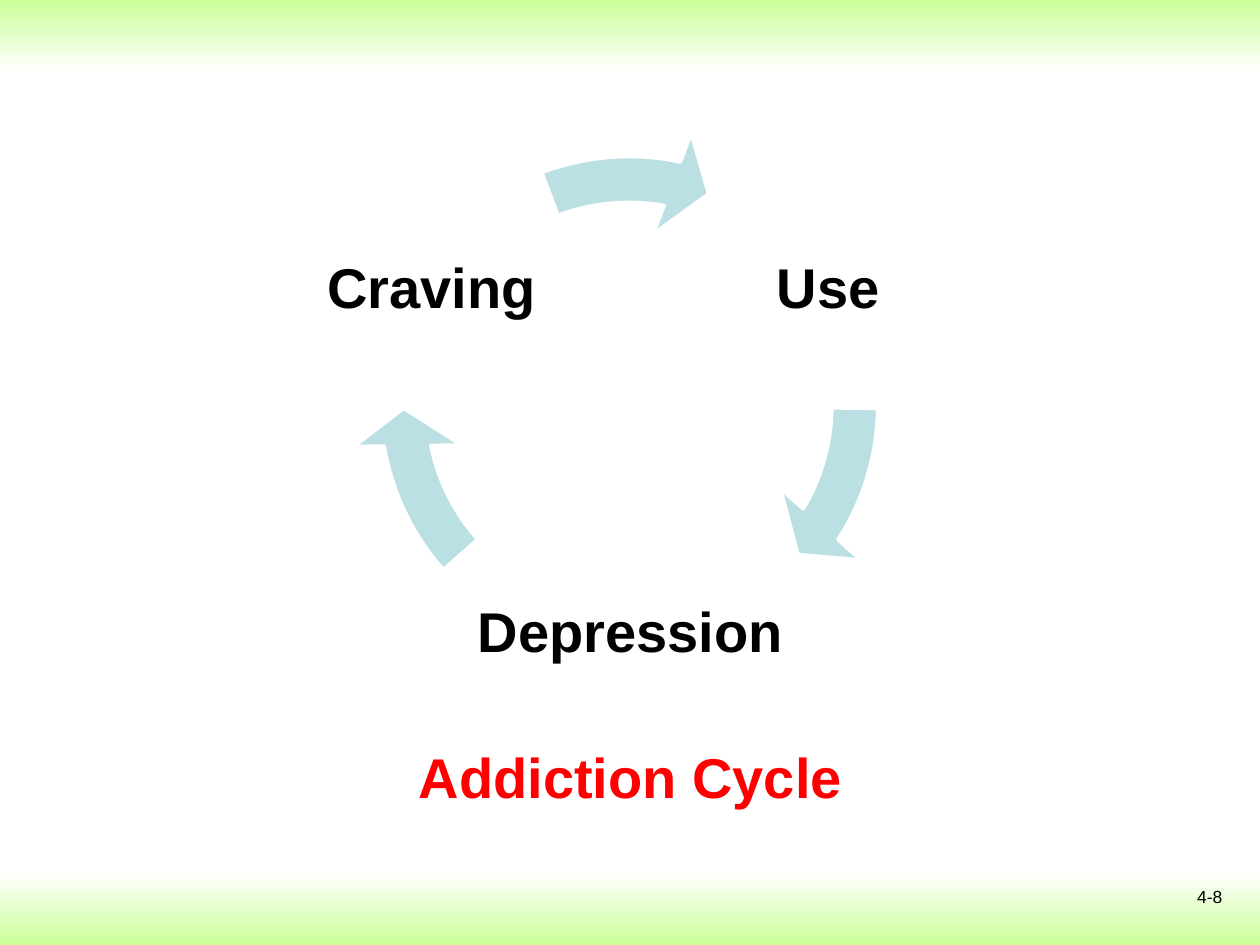
from pptx import Presentation
from pptx.dml.color import RGBColor
from pptx.enum.shapes import MSO_SHAPE as Shape
from pptx.enum.text import MSO_ANCHOR as Anchor, MSO_AUTO_SIZE as Fit, PP_ALIGN as Align
from pptx.util import Inches, Pt

BLACK = RGBColor(0x00, 0x00, 0x00)
WHITE = RGBColor(0xFF, 0xFF, 0xFF)
RED = RGBColor(0xFF, 0x00, 0x00)
LIME = RGBColor(0xCC, 0xFF, 0x99)
TEAL = RGBColor(0xBB, 0xE0, 0xE3)
LABEL = {"name": "Arial", "size": Pt(32), "bold": True}
SMALL = {"name": "Arial", "size": Pt(10), "bold": False}


def write(box, text, color, font, align=Align.CENTER):
    para = box.text_frame.paragraphs[0]
    para.alignment = align
    run = para.add_run()
    run.text = text
    for key, val in font.items():
        setattr(run.font, key, val)
    run.font.color.rgb = color
    return para


deck = Presentation()
deck.slide_width, deck.slide_height = Inches(10), Inches(7.5)
slide = deck.slides.add_slide(deck.slide_layouts[5])
shapes = slide.shapes

# Bands fading towards the middle of the slide
for top, colors in ((6.92, (WHITE, LIME)), (0, (LIME, WHITE))):
    band = shapes.add_shape(Shape.RECTANGLE, 0, Inches(top), Inches(10), Inches(0.58))
    band.shadow.inherit = False
    band.line.fill.background()
    band.fill.gradient()
    band.fill.gradient_angle = 270
    for stop, color in zip(band.fill.gradient_stops, colors):
        stop.color.rgb = color

title = shapes.title
title.left, title.top = Inches(3.21), Inches(5.84)
title.width, title.height = Inches(3.59), Inches(0.64)
frame = title.text_frame
frame.word_wrap = False
frame.auto_size = Fit.NONE
frame.vertical_anchor = Anchor.TOP
write(title, "Addiction Cycle", RED, LABEL)

number = shapes.add_textbox(Inches(7.47), Inches(6.98), Inches(2.33), Inches(0.52))
number.text_frame.word_wrap = True
write(number, "4-8", BLACK, SMALL, Align.RIGHT)

# Each stage: label, left, top, width, then end and start of the arrow that follows
stages = (
    ("Use", 5.64, 1.37, 1.87, 19.175, 0.485),
    ("Depression", 3.64, 4.1, 2.73, 101.762, 83.072),
    ("Craving", 2.49, 1.37, 1.87, 168.603, 149.644),
)
for text, left, top, width, end, start in stages:
    box = shapes.add_textbox(Inches(left), Inches(top), Inches(width), Inches(1.87))
    frame = box.text_frame
    frame.word_wrap = True
    frame.vertical_anchor = Anchor.MIDDLE
    for side in ("left", "right", "top", "bottom"):
        setattr(frame, f"margin_{side}", Inches(0.04))
    write(box, text, BLACK, LABEL).line_spacing = 0.9

    arrow = shapes.add_shape(
        Shape.CIRCULAR_ARROW, Inches(2.78), Inches(1), Inches(4.43), Inches(4.43))
    for i, val in enumerate((0.082, 5.753, end, start, 0.096)):
        arrow.adjustments[i] = val
    arrow.shadow.inherit = False
    arrow.fill.solid()
    arrow.fill.fore_color.rgb = TEAL
    arrow.line.color.rgb = WHITE
    arrow.line.width = Pt(2)

deck.save("out.pptx")
